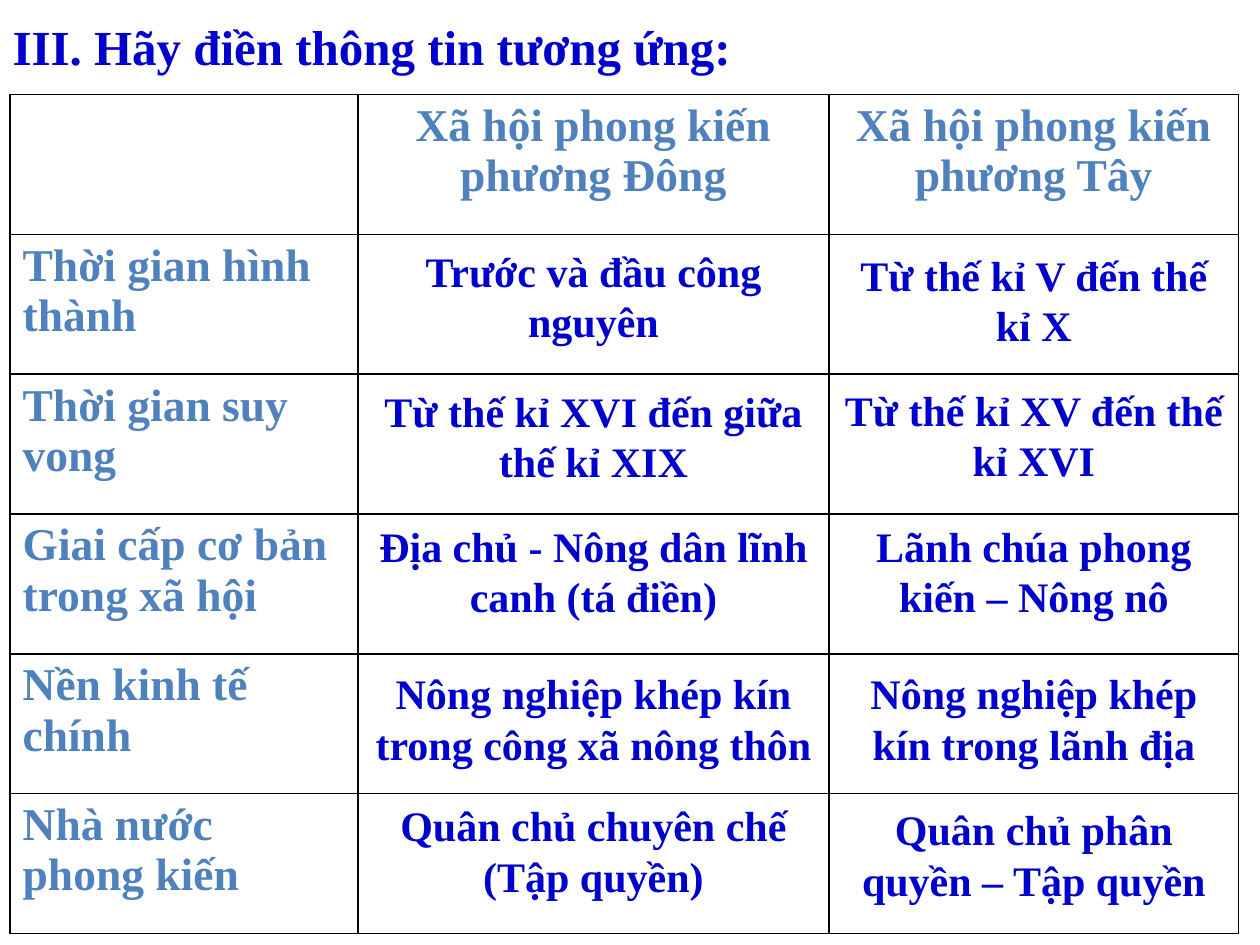
from dataclasses import dataclass

from lxml import etree
from pptx import Presentation
from pptx.dml.color import RGBColor
from pptx.enum.text import MSO_ANCHOR, MSO_AUTO_SIZE, PP_ALIGN
from pptx.oxml.ns import qn
from pptx.util import Inches, Pt

LEFT, MID = PP_ALIGN.LEFT, PP_ALIGN.CENTER
TOP = MSO_ANCHOR.TOP
FIXED = MSO_AUTO_SIZE.NONE


@dataclass(frozen=True)
class Theme:
    font: str = "Times New Roman"
    ink: str = "0000CC"
    label: str = "4F81BD"
    rule: str = "000000"
    title: float = 28
    head: float = 26
    body: float = 24
    line: float = 1


# Grid in inches
GRID_X, GRID_Y = 0.08, 0.75
COLS = (2.76, 3.74, 3.25)
ROW = 1.11

HEADS = ("", "Xã hội phong kiến phương Đông", "Xã hội phong kiến phương Tây")

# Row label, then answer and its drop below the row's top, for each column
ROWS = (
    ("Thời gian hình thành",
     ("Trước và đầu công nguyên", 0.04),
     ("Từ thế kỉ V đến thế kỉ X", 0.07)),
    ("Thời gian suy vong",
     ("Từ thế kỉ XVI đến giữa thế kỉ XIX", 0.04),
     ("Từ thế kỉ XV đến thế kỉ XVI", 0.03)),
    ("Giai cấp cơ bản trong xã hội",
     ("Địa chủ - Nông dân lĩnh canh (tá điền)", 0),
     ("Lãnh chúa phong kiến – Nông nô", 0)),
    ("Nền kinh tế chính",
     ("Nông nghiệp khép kín trong công xã nông thôn", 0.06),
     ("Nông nghiệp khép kín trong lãnh địa", 0.06)),
    ("Nhà nước phong kiến",
     ("Quân chủ chuyên chế (Tập quyền)", 0),
     ("Quân chủ phân quyền – Tập quyền", 0.03)),
)


class Deck:
    def __init__(self, theme):
        self.theme = theme
        self.file = Presentation()
        self.file.slide_width, self.file.slide_height = Inches(10), Inches(7.5)
        self.slide = self.file.slides.add_slide(self.file.slide_layouts[5])

    def label(self, frame, text, size, color, align):
        frame.text = text
        para = frame.paragraphs[0]
        para.alignment = align
        for run in para.runs:
            font = run.font
            font.name, font.size, font.bold = self.theme.font, Pt(size), True
            font.color.rgb = RGBColor.from_string(color)

    def title(self, text, x, y, w, h):
        box = self.slide.shapes.title
        box.left, box.top, box.width, box.height = map(Inches, (x, y, w, h))
        frame = box.text_frame
        frame.vertical_anchor, frame.auto_size = TOP, FIXED
        self.label(frame, text, self.theme.title, self.theme.ink, LEFT)

    def border(self, cell):
        props = cell._tc.get_or_add_tcPr()
        for spot, tag in enumerate(("a:lnL", "a:lnR", "a:lnT", "a:lnB")):
            line = etree.Element(qn(tag), w=str(Pt(self.theme.line)))
            fill = etree.SubElement(line, qn("a:solidFill"))
            etree.SubElement(fill, qn("a:srgbClr"), val=self.theme.rule)
            props.insert(spot, line)

    def table(self, data):
        frame = self.slide.shapes.add_table(
            len(data), len(COLS), Inches(GRID_X), Inches(GRID_Y),
            Inches(sum(COLS)), Inches(ROW * len(data)))
        grid = frame.table
        for col, width in zip(grid.columns, COLS):
            col.width = Inches(width)
        for r, texts in enumerate(data):
            grid.rows[r].height = Inches(ROW)
            for c, text in enumerate(texts):
                cell = grid.cell(r, c)
                cell.fill.background()
                self.border(cell)
                self.label(cell.text_frame, text, self.theme.head,
                           self.theme.label, MID if c else LEFT)

    def answer(self, text, row, col, drop):
        x = GRID_X + sum(COLS[:col])
        y = GRID_Y + row * ROW + drop
        box = self.slide.shapes.add_textbox(
            Inches(x), Inches(y), Inches(COLS[col]), Inches(1.03))
        box.text_frame.word_wrap = True
        self.label(box.text_frame, text, self.theme.body, self.theme.ink, MID)


def main():
    deck = Deck(Theme())

    # Heading
    deck.title("III. Hãy điền thông tin tương ứng:", 0, 0.08, 7.5, 0.57)

    # Table with its labels
    deck.table([HEADS] + [(label, "", "") for label, *_ in ROWS])

    # Answers laid over the empty cells
    for row, (_, *answers) in enumerate(ROWS, 1):
        for col, (text, drop) in enumerate(answers, 1):
            deck.answer(text, row, col, drop)

    deck.file.save("out.pptx")


if __name__ == "__main__":
    main()
